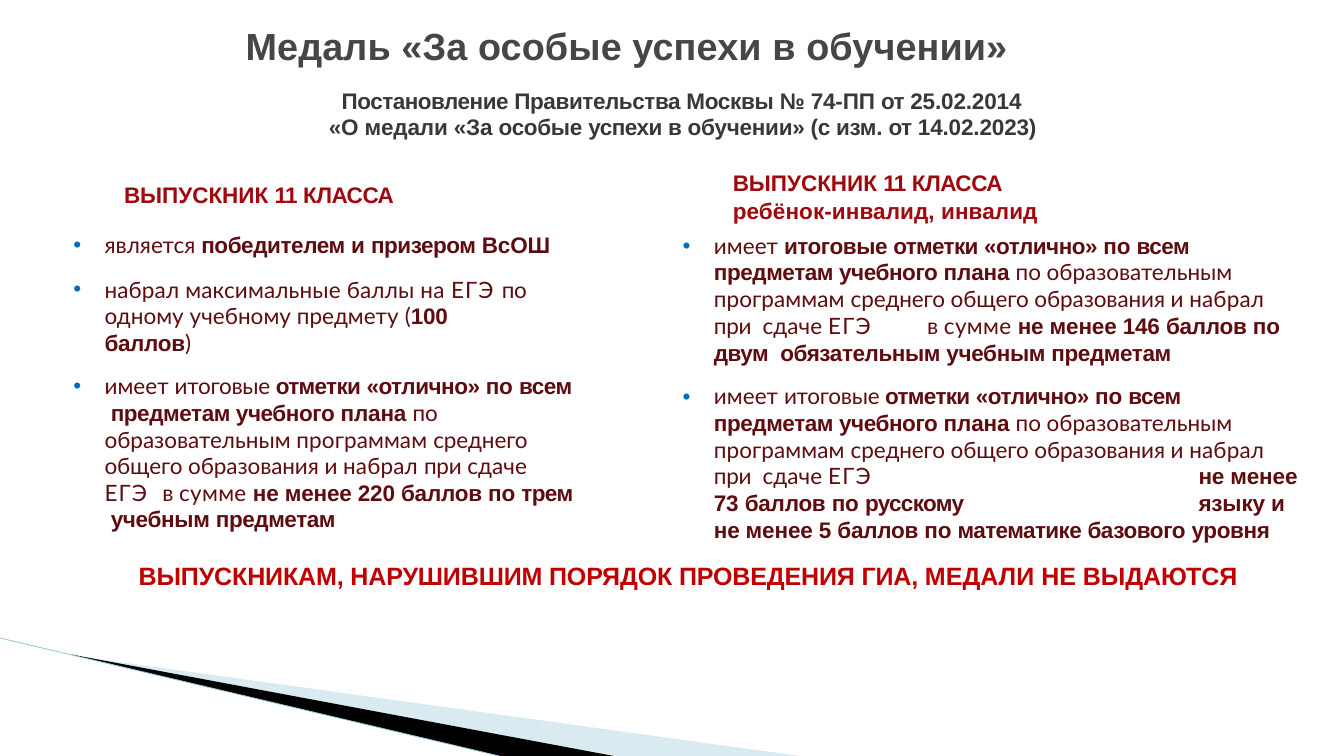
import pptx
import pptx.dml.color
import pptx.enum.shapes
import pptx.enum.text
import pptx.oxml.ns
import pptx.util
import lxml.etree

PX = 9144  # 100 px to the inch


class Theme:
    heading_font, body_font = "Arial", "Lato"
    title, subtitle, heading, body = "464646", "393838", "9F090D", "5E0C0F"
    warning, bullet, white = "C00000", "006EC0", "FFFFFF"
    wedge_light, wedge_dark, wedge_line = "A0CBDC", "000000", "97C5D8"
    title_size, text_size, warning_size = 44.5, 26.5, 29.5


def rgb(value):
    return pptx.dml.color.RGBColor.from_string(value)


def write_text(shape, paragraphs, color, size=Theme.text_size, inset=1):
    """Each paragraph is (options, runs); each run is (text, bold, letter spacing)."""
    frame = shape.text_frame
    frame.word_wrap = True
    frame.auto_size = pptx.enum.text.MSO_AUTO_SIZE.NONE
    frame.margin_left = frame.margin_right = frame.margin_bottom = 0
    frame.margin_top = inset * PX
    for index, (options, runs) in enumerate(paragraphs):
        paragraph = frame.add_paragraph() if index else frame.paragraphs[0]
        paragraph.alignment = pptx.enum.text.PP_ALIGN.LEFT
        properties = paragraph._p.get_or_add_pPr()
        hanging = options.get("bullet", False)
        properties.set("marL", str(options.get("indent", 0) * PX))
        properties.set("indent", str(-51 * PX if hanging else 0))
        properties.set("marR", str(options.get("right", 0) * PX))
        # Bullet and tab stops
        if hanging:
            bullet_color = lxml.etree.SubElement(properties, pptx.oxml.ns.qn("a:buClr"))
            lxml.etree.SubElement(bullet_color, pptx.oxml.ns.qn("a:srgbClr"), val=Theme.bullet)
            lxml.etree.SubElement(properties, pptx.oxml.ns.qn("a:buFont"), typeface=Theme.heading_font)
            lxml.etree.SubElement(properties, pptx.oxml.ns.qn("a:buChar"), char="•")
        if "tabs" in options:
            tab_list = lxml.etree.SubElement(properties, pptx.oxml.ns.qn("a:tabLst"))
            for position in options["tabs"]:
                lxml.etree.SubElement(tab_list, pptx.oxml.ns.qn("a:tab"), pos=str(position * PX), algn="l")
        paragraph.space_before = pptx.util.Pt(options.get("before", 0))
        paragraph.line_spacing = options.get("line", 1.0)
        for text, bold, spacing in runs:
            run = paragraph.add_run()
            run.text = text
            run.font.name = Theme.heading_font if bold else Theme.body_font
            run.font.size = pptx.util.Pt(size)
            run.font.bold = bold
            run.font.color.rgb = rgb(color)
            run._r.get_or_add_rPr().set("spc", str(round(spacing * 100)))


presentation = pptx.Presentation()
presentation.slide_width = 2199 * PX
presentation.slide_height = 1237 * PX
slide = presentation.slides.add_slide(presentation.slide_layouts[5])
shapes = slide.shapes

# Corner wedges
wedges = [
    ([(120, 1073), (1308, 1237), (1002, 1237), (120, 1072)], Theme.wedge_light, 40),
    ([(117, 1071), (1004, 1237), (817, 1237), (119, 1072)], Theme.wedge_dark, 100),
]
for points, color, opacity in wedges:
    builder = shapes.build_freeform(*points[0], scale=PX)
    builder.add_line_segments(points[1:], close=True)
    wedge = builder.convert_to_shape()
    wedge.shadow.inherit = False
    wedge.line.fill.background()
    wedge.fill.solid()
    wedge.fill.fore_color.rgb = rgb(color)
    if opacity < 100:
        fill_color = wedge._element.spPr.find(".//" + pptx.oxml.ns.qn("a:srgbClr"))
        lxml.etree.SubElement(fill_color, pptx.oxml.ns.qn("a:alpha"), val=str(opacity * 1000))

wedge_line = shapes.add_connector(
    pptx.enum.shapes.MSO_CONNECTOR.STRAIGHT, 0, 1044 * PX, 817 * PX, 1237 * PX)
wedge_line.line.color.rgb = rgb(Theme.wedge_line)
wedge_line.line.width = pptx.util.Pt(0.95)
lxml.etree.SubElement(wedge_line._element.spPr, pptx.oxml.ns.qn("a:effectLst"))

# Title
title = shapes.title
title.left, title.top, title.width, title.height = [v * PX for v in (401, 35, 1268, 77)]
write_text(title, [({"indent": 1}, [("Медаль «За особые успехи в обучении»", True, 0.15)])],
           Theme.title, Theme.title_size)
title.text_frame.vertical_anchor = pptx.enum.text.MSO_ANCHOR.MIDDLE

# Column headings
class_runs = [("ВЫПУСКНИК ", True, -0.05), ("11 ", True, -0.9), ("КЛАССА", True, -0.6)]
headings = [
    ((187, 256, 557, 84), 40, [({"indent": 16}, class_runs)]),
    ((1141, 256, 728, 113), 21, [
        ({"indent": 58}, class_runs),
        ({"indent": 58, "before": 0.8}, [("ребёнок-инвалид, инвалид", True, 0.1)])]),
]
for box, inset, paragraphs in headings:
    heading = shapes.add_shape(pptx.enum.shapes.MSO_SHAPE.RECTANGLE, *[v * PX for v in box])
    heading.shadow.inherit = False
    heading.fill.solid()
    heading.fill.fore_color.rgb = rgb(Theme.white)
    heading.line.fill.background()
    write_text(heading, paragraphs, Theme.heading, inset=inset)
    heading.text_frame.vertical_anchor = pptx.enum.text.MSO_ANCHOR.TOP

# Wording shared by the bullets
plan = [("предметам учебного ", True, -0.5), ("плана ", True, -0.2)]
points_scored = [("баллов ", True, -0.3), ("по ", True, -0.2)]
in_total = [("в ", False, -0.1), ("сумме ", False, 0.4)]
programme = plan + [
    ("по образовательным  ", False, -0.05), ("программам ", False, 0.1),
    ("среднего общего образования и ", False, -0.1), ("набрал ", False, 0.2),
    ("при  ", False, -0.3), ("сдаче ", False, 0.1), ("ЕГЭ\t", False, 1.4)]
pt = pptx.util.Pt
item = {"indent": 52, "bullet": True}

subtitle = [
    ({"indent": 22, "line": pt(31.6)}, [
        ("Постановление ", True, -0.6), ("Правительства ", True, -0.5), ("Москвы ", True, -0.4),
        ("№ 74-ПП ", True, -0.2), ("от ", True, -0.7), ("25.02.2014", True, -0.2)]),
    ({"indent": 1, "line": pt(31.6)}, [
        ("«О медали «За ", True, -0.2), ("особые ", True, -0.4), ("успехи ", True, -0.6),
        ("в обучении» ", True, -0.3), ("(с изм. ", True, -0.3), ("от ", True, -0.7),
        ("14.02.2023)", True, -0.2)]),
]
graduate = [
    (item, [("является ", False, 0), ("победителем ", True, -0.5), ("и ", True, -0.1),
            ("призером ", True, -0.6), ("ВсОШ", True, -0.1)]),
    (item | {"line": pt(31.2), "before": 21.4, "right": 60}, [
        ("набрал максимальные баллы на ", False, 0.2), ("ЕГЭ ", False, 1.4), ("по  ", False, -0.5),
        ("одному учебному предмету ", False, 0.05), ("(", False, -0.4),
        ("100 баллов", True, -0.4), (")", False, -0.4)]),
    (item | {"line": pt(31.7), "before": 19.8}, [
        ("имеет ", False, 0.1), ("итоговые ", False, -0.3), ("отметки ", True, -0.8),
        ("«отлично» ", True, -0.6), ("по ", True, -0.2), ("всем  ", True, -0.6)]
        + plan + [("по", False, -0.2)]),
    ({"indent": 52, "line": pt(31)}, [
        ("образовательным ", False, 0), ("программам ", False, 0.1), ("среднего", False, -0.1)]),
    ({"indent": 52, "line": 0.99, "before": 0.4}, [
        ("общего образования и ", False, -0.1), ("набрал ", False, 0.2), ("при ", False, -0.3),
        ("сдаче ", False, 0.1), ("ЕГЭ  ", False, 1.4)] + in_total + [("не менее 220 ", True, -0.2)]
        + points_scored + [("трем  ", True, -0.7), ("учебным ", True, -0.4), ("предметам", True, -0.5)]),
]
disabled_graduate = [
    (item | {"line": 0.99, "right": 10, "tabs": [401]}, [
        ("имеет ", False, 0.1), ("итоговые ", True, -0.55), ("отметки ", True, -0.8),
        ("«отлично» ", True, -0.6), ("по ", True, -0.2), ("всем  ", True, -0.6)]
        + programme + in_total + [("не менее 146 ", True, -0.2)] + points_scored
        + [("двум  ", True, -0.6), ("обязательным ", True, -0.5), ("учебным ", True, -0.4),
           ("предметам", True, -0.5)]),
    (item | {"line": 0.99, "before": 19.9, "right": 10, "tabs": [246, 845]}, [
        ("имеет ", False, 0.1), ("итоговые ", False, -0.3), ("отметки ", True, -0.8),
        ("«отлично» ", True, -0.6), ("по ", True, -0.2), ("всем  ", True, -0.7)]
        + programme + [("не менее 73 ", True, -0.2)] + points_scored
        + [("русскому\t", True, -0.8), ("языку и  ", True, -0.2), ("не менее 5 ", True, -0.2)]
        + points_scored
        + [("математике ", True, -0.7), ("базового ", True, -0.5), ("уровня", True, -0.4)]),
]
warning = [({"indent": 1}, [
    ("ВЫПУСКНИКАМ, НАРУШИВШИМ ПОРЯДОК ПРОВЕДЕНИЯ ГИА, ", True, -0.2),
    ("МЕДАЛИ ", True, 0), ("НЕ ВЫДАЮТСЯ", True, -0.1)])]

# Subtitle, the two bullet columns and the closing warning
text_boxes = [
    ((537, 141, 1168, 90), subtitle, Theme.subtitle, Theme.text_size),
    ((119, 377, 824, 453), graduate, Theme.body, Theme.text_size),
    ((1116, 380, 1025, 470), disabled_graduate, Theme.body, Theme.text_size),
    ((226, 916, 1820, 52), warning, Theme.warning, Theme.warning_size),
]
for box, paragraphs, color, size in text_boxes:
    text_box = shapes.add_textbox(*[v * PX for v in box])
    write_text(text_box, paragraphs, color, size)

presentation.save("out.pptx")
